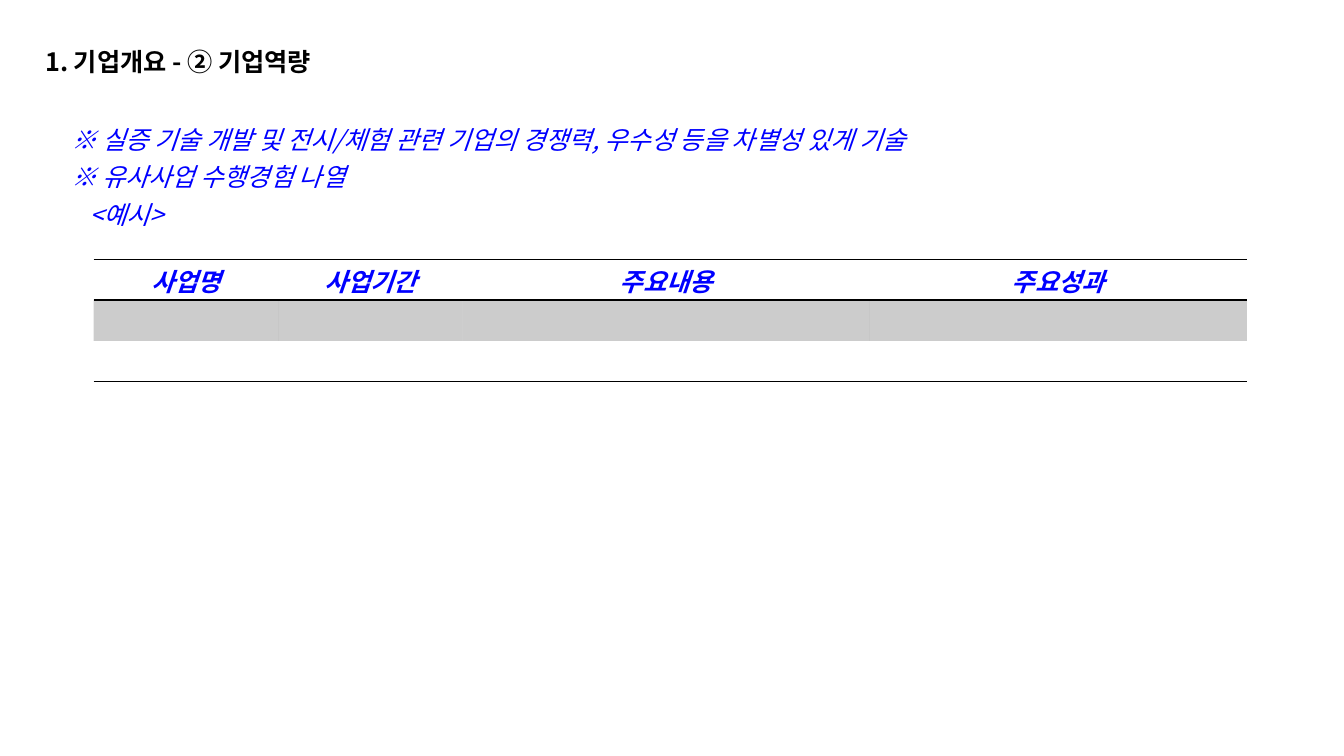
from lxml.etree import SubElement
from pptx import Presentation
from pptx.dml.color import RGBColor
from pptx.enum.text import MSO_AUTO_SIZE as AutoSize, PP_ALIGN as Align
from pptx.oxml.ns import qn
from pptx.util import Cm, Pt

FONT = "Noto Sans CJK KR"
COLORS = {"title": "000000", "guide": "0000FF", "rule": "000000", "band": "000000"}
BAND_OPACITY = 20
PLAIN_TABLE_STYLE = "{2D5ABB26-0587-4C30-8999-92F81FD0307C}"
GUIDE_LINES = [
    ("※ 실증 기술 개발 및 전시/체험 관련 기업의 경쟁력, 우수성 등을 차별성 있게 기술", 0),
    ("※ 유사사업 수행경험 나열", 0),
    ("<예시>", 0.45),
]
COLUMNS = [("사업명", 4.65), ("사업기간", 4.65), ("주요내용", 10.26), ("주요성과", 9.5)]
ROW_COUNT = 3
ROW_HEIGHT = 1.03


def format_runs(paragraph, color, bold=False, italic=False):
    """Apply the slide's typeface and the given emphasis to every run."""
    for run in paragraph.runs:
        font = run.font
        font.size, font.bold, font.italic = Pt(18), bold, italic
        font.color.rgb = RGBColor.from_string(COLORS[color])
        font.name = FONT
        SubElement(font._element, qn("a:ea"), typeface=FONT)


def add_text_box(slide, left, top, width, height, margin_top):
    """Add a wrapping text box and return its text frame."""
    text_frame = slide.shapes.add_textbox(Cm(left), Cm(top), Cm(width), Cm(height)).text_frame
    text_frame.word_wrap = True
    text_frame.auto_size = AutoSize.NONE
    text_frame.margin_top = Cm(margin_top)
    return text_frame


def add_title(slide, text):
    """Add the section heading."""
    paragraph = add_text_box(slide, 0.89, 1.17, 17.04, 1.02, 0).paragraphs[0]
    paragraph.text = text
    format_runs(paragraph, "title", bold=True)


def add_guide(slide):
    """Add the writing guide above the table."""
    text_frame = add_text_box(slide, 1.55, 2.77, 31.62, 7.19, 0.18)
    text_frame.text = "\n".join(text for text, _ in GUIDE_LINES)
    for paragraph, (_, indent) in zip(text_frame.paragraphs, GUIDE_LINES):
        paragraph.line_spacing = 1.24
        paragraph._p.get_or_add_pPr().set("marL", str(Cm(indent)))
        format_runs(paragraph, "guide", italic=True)


def add_border(cell, side):
    """Draw a one-point rule on one side of a cell."""
    line = SubElement(cell._tc.get_or_add_tcPr(), qn(f"a:ln{side}"), w=str(Pt(1)))
    fill = SubElement(line, qn("a:solidFill"))
    SubElement(fill, qn("a:srgbClr"), val=COLORS["rule"])


def fill_band(cell):
    """Shade a cell with a translucent fill."""
    cell.fill.solid()
    cell.fill.fore_color.rgb = RGBColor.from_string(COLORS["band"])
    color = cell._tc.tcPr.find(f"{qn('a:solidFill')}/{qn('a:srgbClr')}")
    SubElement(color, qn("a:alpha"), val=str(BAND_OPACITY * 1000))


def add_experience_table(slide):
    """Add the table of similar projects."""
    width = sum(column_width for _, column_width in COLUMNS)
    frame = slide.shapes.add_table(
        ROW_COUNT, len(COLUMNS), Cm(2.36), Cm(6.53), Cm(width), Cm(ROW_COUNT * ROW_HEIGHT)
    )
    table = frame.table
    table._tbl.tblPr.find(qn("a:tableStyleId")).text = PLAIN_TABLE_STYLE
    for row in table.rows:
        row.height = Cm(ROW_HEIGHT)
    for index, (heading, column_width) in enumerate(COLUMNS):
        table.columns[index].width = Cm(column_width)
        header, band, last = (table.cell(row, index) for row in range(ROW_COUNT))
        header.margin_top, header.margin_bottom = Cm(0.09), Cm(0)
        paragraph = header.text_frame.paragraphs[0]
        paragraph.text = heading
        paragraph.alignment = Align.CENTER
        format_runs(paragraph, "guide", bold=True, italic=True)
        add_border(header, "T")
        add_border(header, "B")
        add_border(last, "B")
        header.fill.background()
        fill_band(band)
        last.fill.background()


def main():
    """Build and save the slide."""
    presentation = Presentation()
    presentation.slide_width, presentation.slide_height = Cm(33.87), Cm(19.05)
    slide = presentation.slides.add_slide(presentation.slide_layouts[6])
    add_title(slide, "1. 기업개요 - ② 기업역량")
    add_guide(slide)
    add_experience_table(slide)
    presentation.save("out.pptx")


if __name__ == "__main__":
    main()
